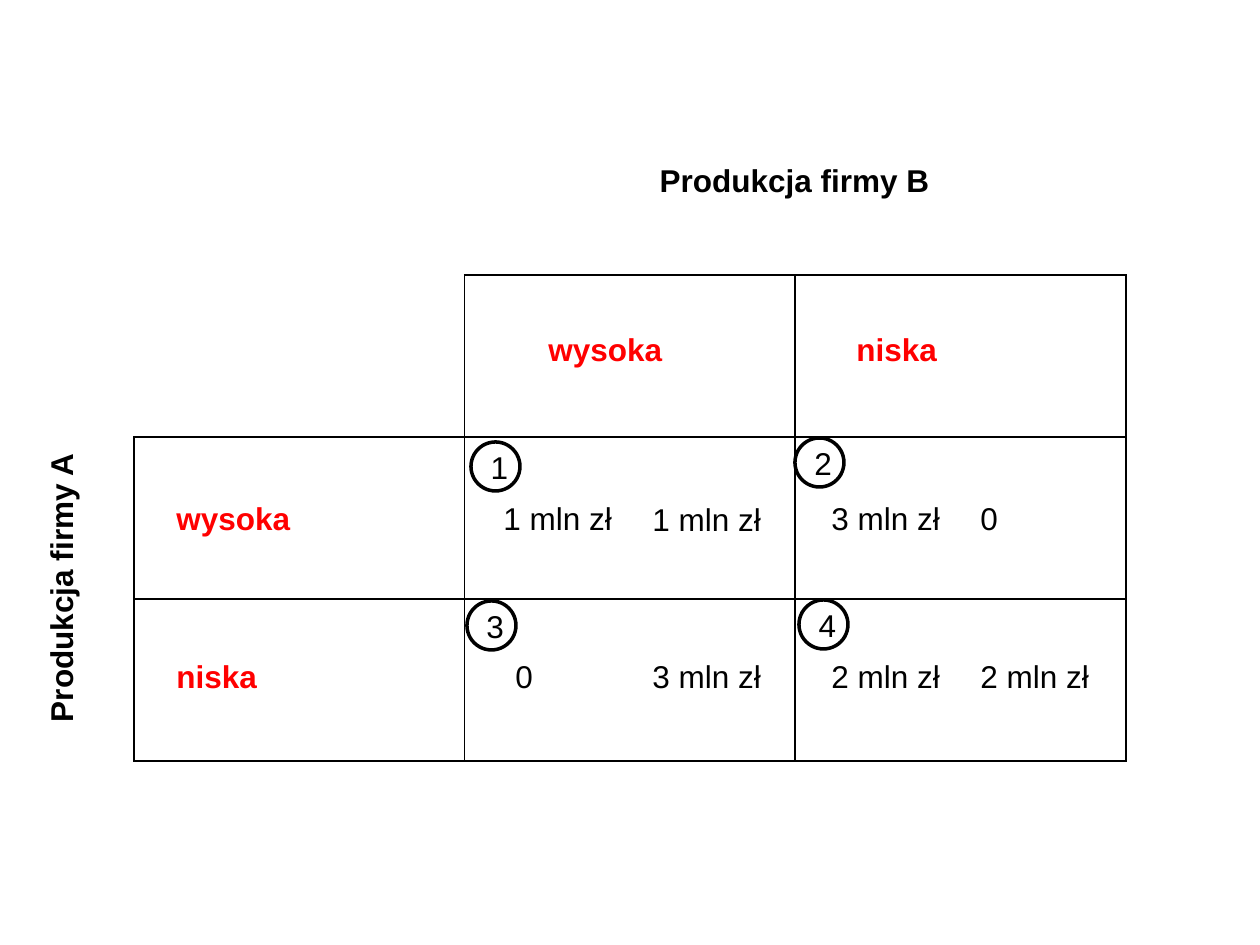
from lxml import etree
from pptx import Presentation
from pptx.dml.color import RGBColor
from pptx.enum.shapes import MSO_SHAPE
from pptx.enum.text import MSO_ANCHOR, MSO_AUTO_SIZE, PP_ALIGN
from pptx.oxml.ns import qn
from pptx.util import Emu, Pt

OVAL = MSO_SHAPE.OVAL
MIDDLE = MSO_ANCHOR.MIDDLE
GROW = MSO_AUTO_SIZE.SHAPE_TO_FIT_TEXT
LEFT, CENTER = PP_ALIGN.LEFT, PP_ALIGN.CENTER
SCALE = 914400 / 126
BLACK, RED = "000000", "FF0000"
LABELS = [(402, 49, "wysoka"), (710, 49, "niska"),
          (30, 218, "wysoka"), (30, 376, "niska")]
PAYOFFS = [(357, 218, "1 mln zł"), (506, 219, "1 mln zł"),
           (685, 218, "3 mln zł"), (834, 218, "0"),
           (369, 376, "0"), (506, 376, "3 mln zł"),
           (685, 376, "2 mln zł"), (834, 376, "2 mln zł")]
BADGES = [(337, 167), (661, 163), (333, 326), (665, 325)]


def px(*nums):
    """Turn pixel lengths into EMU."""
    return [Emu(round(n * SCALE)) for n in nums]


def color(code):
    """Turn a hex string into a colour."""
    return RGBColor.from_string(code)


def write(frame, text, code=BLACK, bold=False, align=LEFT):
    """Write one run of text into a frame."""
    frame.word_wrap = True
    para = frame.paragraphs[0]
    para.alignment = align
    run = para.add_run()
    run.text = text
    font = run.font
    font.name, font.size, font.bold = "Arial", Pt(18), bold
    font.color.rgb = color(code)


def add_text(slide, box, text, **style):
    """Add a text box that grows with its text."""
    shape = slide.shapes.add_textbox(*px(*box))
    write(shape.text_frame, text, **style)
    shape.text_frame.auto_size = GROW
    return shape


def add_badge(slide, box, text):
    """Add a numbered ring."""
    ring = slide.shapes.add_shape(OVAL, *px(*box))
    ring.shadow.inherit = False
    ring.fill.background()
    ring.line.color.rgb = color(BLACK)
    ring.line.width = Pt(2)
    ring.text_frame.vertical_anchor = MIDDLE
    write(ring.text_frame, text, align=CENTER)


def set_border(cell, sides):
    """Draw the given sides of a cell and hide the others."""
    props = cell._tc.get_or_add_tcPr()
    for spot, side in enumerate("LRTB"):
        line = etree.Element(qn(f"a:ln{side}"), w=str(Pt(1)))
        if side in sides:
            fill = etree.SubElement(line, qn("a:solidFill"))
            etree.SubElement(fill, qn("a:srgbClr"), val=BLACK)
        else:
            etree.SubElement(line, qn("a:noFill"))
        props.insert(spot, line)


def add_grid(slide, box):
    """Add the empty three by three table."""
    table = slide.shapes.add_table(3, 3, *px(*box)).table
    table.first_row = table.horz_banding = False
    for row in range(3):
        for col in range(3):
            cell = table.cell(row, col)
            cell.fill.background()
            set_border(cell, "LRTB" if row or col else "RB")


def add_matrix(slide, box):
    """Add the payoff matrix with its labels, payoffs and badges."""
    left, top = box[:2]
    add_grid(slide, box)
    for x, y, text in PAYOFFS:
        add_text(slide, (left + x, top + y, 149, 50), text)
    for x, y, text in LABELS:
        add_text(slide, (left + x, top + y, 208, 50), text, code=RED, bold=True)
    for num, (x, y) in enumerate(BADGES, 1):
        add_badge(slide, (left + x, top + y, 49, 49), str(num))


def add_axis(slide, box, text, turn=0):
    """Add the bold name of one axis."""
    add_text(slide, box, text, bold=True, align=CENTER).rotation = turn


def main():
    """Build and save the slide."""
    deck = Presentation()
    deck.slide_width, deck.slide_height = px(1260, 945)
    slide = deck.slides.add_slide(deck.slide_layouts[6])
    add_matrix(slide, (134, 275, 992, 486))
    add_axis(slide, (536, 155, 517, 50), "Produkcja firmy B")
    add_axis(slide, (-198, 563, 517, 50), "Produkcja firmy A", 270)
    deck.save("out.pptx")


if __name__ == "__main__":
    main()
